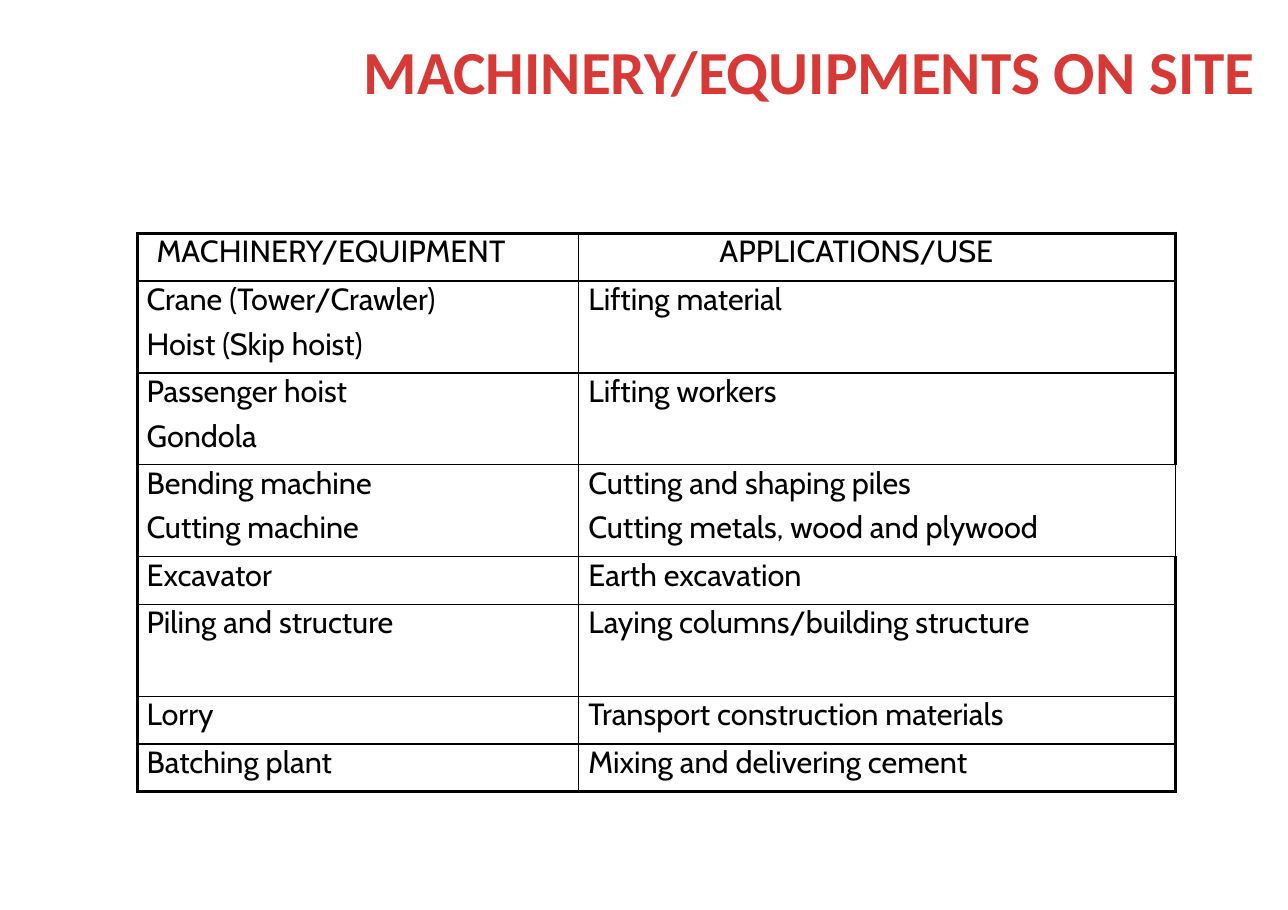
from pptx import Presentation
from pptx.dml.color import RGBColor
from pptx.enum.text import MSO_ANCHOR, PP_ALIGN
from pptx.oxml.ns import qn
from pptx.util import Cm, Pt
from lxml import etree

RIGHT = PP_ALIGN.RIGHT
MIDDLE = MSO_ANCHOR.MIDDLE
TOP = MSO_ANCHOR.TOP

COLORS = {"title": "D73A36", "text": "000000", "border": "000000"}
THICK, THIN = Pt(2.28), Pt(1.08)

HEADERS = ("MACHINERY/EQUIPMENT", "APPLICATIONS/USE")
MACHINES = [
    (["Crane (Tower/Crawler)", "Hoist (Skip hoist)"], ["Lifting material"]),
    (["Passenger hoist", "Gondola"], ["Lifting workers"]),
    (["Bending machine", "Cutting machine"],
     ["Cutting and shaping piles", "Cutting metals, wood and plywood"]),
    (["Excavator"], ["Earth excavation"]),
    (["Piling and structure"], ["Laying columns/building structure"]),
    (["Lorry"], ["Transport construction materials"]),
    (["Batching plant"], ["Mixing and delivering cement"]),
]
ROWS = [([HEADERS[0]], [HEADERS[1]])] + MACHINES
SINGLE, DOUBLE = Cm(1.1), Cm(2.12)
ROW_HEIGHTS = [SINGLE, DOUBLE, DOUBLE, DOUBLE, SINGLE, DOUBLE, SINGLE, SINGLE]
COLUMN_WIDTHS = [Cm(10.16), Cm(13.77)]
HEADER_INDENTS = [Cm(0.43), Cm(3.25)]
BODY_INDENTS = [Cm(0.2), Cm(0.23)]
THIN_RIGHT_ROW = 3  # the one row whose right edge is thin


def add_text(paragraph, text, font_name, size, color, bold=False):
    run = paragraph.add_run()
    run.text = text
    run.font.name = font_name
    run.font.size = Pt(size)
    run.font.bold = bold
    run.font.color.rgb = RGBColor.from_string(COLORS[color])


def set_borders(cell, widths):
    properties = cell._tc.get_or_add_tcPr()
    for side, width in zip(("lnL", "lnR", "lnT", "lnB"), widths):
        line = etree.SubElement(properties, qn("a:" + side), w=str(int(width)))
        fill = etree.SubElement(line, qn("a:solidFill"))
        etree.SubElement(fill, qn("a:srgbClr"), val=COLORS["border"])


presentation = Presentation()
presentation.slide_width = Cm(29.7)
presentation.slide_height = Cm(20.99)
slide = presentation.slides.add_slide(presentation.slide_layouts[6])

# Title
title = slide.shapes.add_textbox(Cm(7.01), Cm(0.76), Cm(21.92), Cm(1.7))
frame = title.text_frame
frame.word_wrap = True
frame.vertical_anchor = MIDDLE
frame.margin_left = frame.margin_right = frame.margin_top = frame.margin_bottom = 0
frame.paragraphs[0].alignment = RIGHT
add_text(frame.paragraphs[0], "MACHINERY/EQUIPMENTS ON SITE", "Calibri", 40, "title", True)

# Table grid
table = slide.shapes.add_table(
    len(ROWS), len(COLUMN_WIDTHS), Cm(3.18), Cm(5.38),
    sum(COLUMN_WIDTHS), sum(ROW_HEIGHTS)).table
table.first_row = False
table.horz_banding = False
for column, width in zip(table.columns, COLUMN_WIDTHS):
    column.width = width
for row, height in zip(table.rows, ROW_HEIGHTS):
    row.height = height

# Table cells
last_row, last_column = len(ROWS) - 1, len(COLUMN_WIDTHS) - 1
for row_index, row_texts in enumerate(ROWS):
    indents = HEADER_INDENTS if row_index == 0 else BODY_INDENTS
    for column_index, lines in enumerate(row_texts):
        cell = table.cell(row_index, column_index)
        thick_right = column_index == last_column and row_index != THIN_RIGHT_ROW
        outer_sides = (column_index == 0, thick_right,
                       row_index == 0, row_index == last_row)
        set_borders(cell, [THICK if outer else THIN for outer in outer_sides])
        cell.fill.background()
        cell.vertical_anchor = TOP
        cell.margin_left = indents[column_index]
        cell.margin_right = cell.margin_top = cell.margin_bottom = 0
        for line_index, text in enumerate(lines):
            if line_index == 0:
                paragraph = cell.text_frame.paragraphs[0]
            else:
                paragraph = cell.text_frame.add_paragraph()
                paragraph.space_before = Pt(4.8)
            add_text(paragraph, text, "Cabin", 20, "text")

presentation.save("out.pptx")
